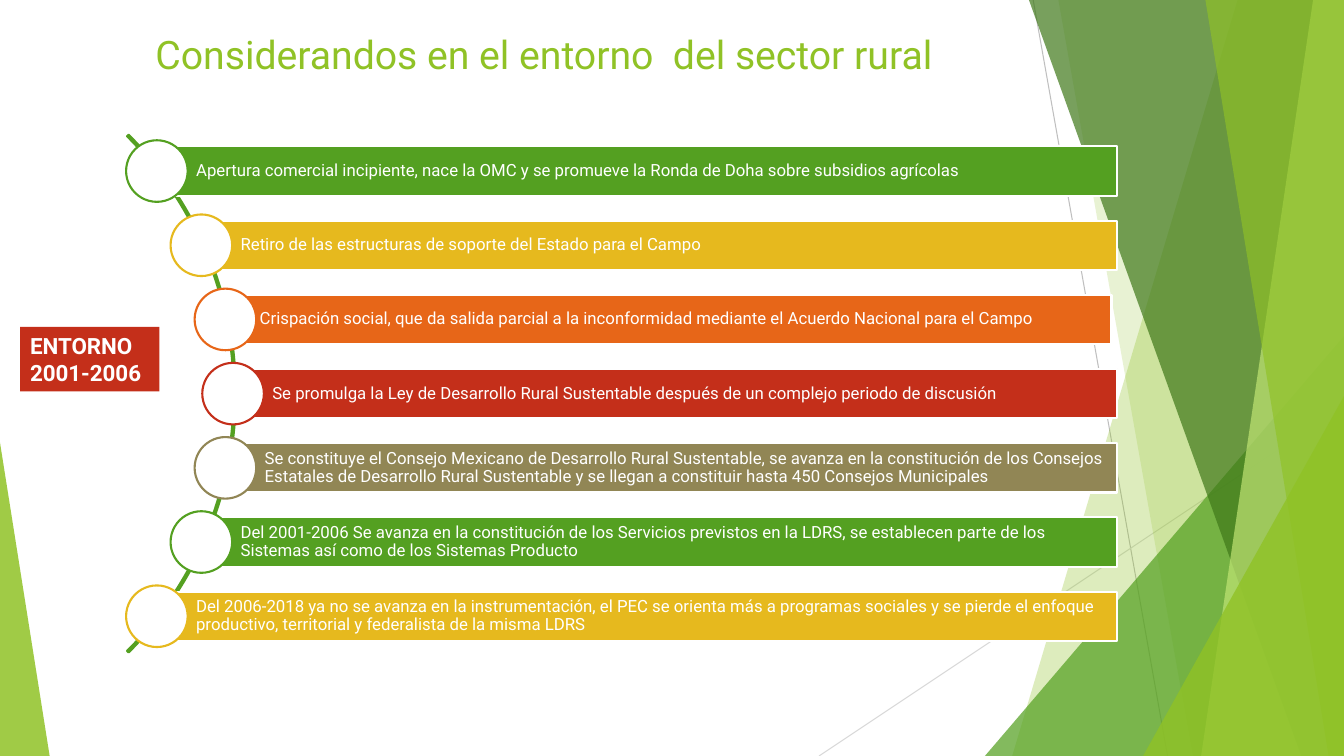
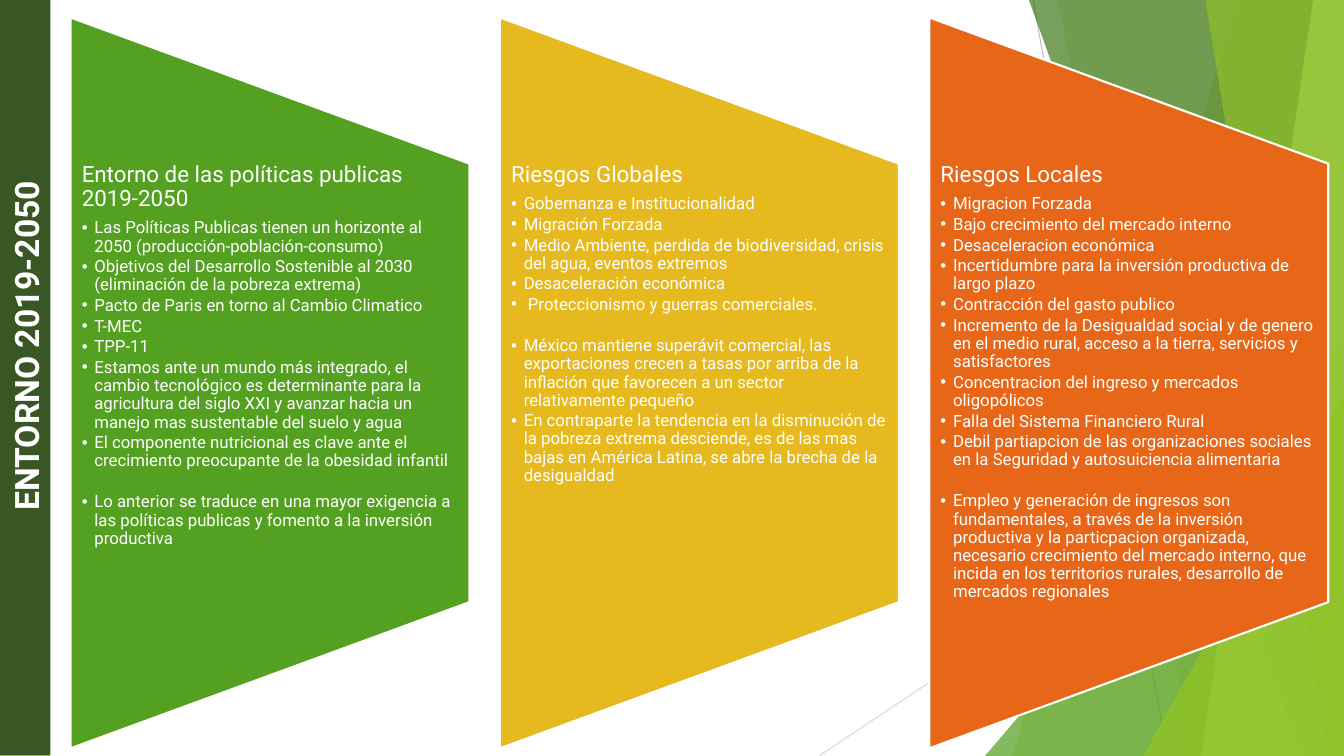
import math

import lxml.etree
import pptx
import pptx.dml.color
import pptx.enum.shapes
import pptx.enum.text
import pptx.oxml.ns
import pptx.util

Pt = pptx.util.Pt
SHAPE = pptx.enum.shapes.MSO_SHAPE
ALIGN = pptx.enum.text.PP_ALIGN
ANCHOR = pptx.enum.text.MSO_ANCHOR
qn = pptx.oxml.ns.qn

FONT = "Roboto"
COLORS = {
    "white": "FFFFFF",
    "lime": "90C226",
    "pale lime": "C0E474",
    "green": "54A021",
    "dark green": "3F7819",
    "forest": "385724",
    "yellow": "E6B91E",
    "orange": "E76618",
    "red": "C42F1A",
    "olive": "918655",
    "gray": "BFBFBF",
    "light gray": "D9D9D9",
}


def rgb(name):
    return pptx.dml.color.RGBColor.from_string(COLORS[name])


def paint(shape, fill=None, line=None, alpha=None):
    shape.shadow.inherit = False
    if fill:
        shape.fill.solid()
        shape.fill.fore_color.rgb = rgb(fill)
    else:
        shape.fill.background()
    if alpha:
        color = shape.element.xpath("./p:spPr/a:solidFill/a:srgbClr")[0]
        lxml.etree.SubElement(color, qn("a:alpha"), val=str(alpha * 1000))
    if line:
        shape.line.color.rgb = rgb(line)
        shape.line.width = Pt(1.5)
    else:
        shape.line.fill.background()


def write(shape, text, size=12, color="white", bold=False, align=ALIGN.LEFT,
          anchor=ANCHOR.MIDDLE, margins=(7.2, 3.6, 7.2, 3.6), spacing=1.0,
          before=0, after=0, bullet=False):
    frame = shape.text_frame
    frame.word_wrap = True
    frame.auto_size = pptx.enum.text.MSO_AUTO_SIZE.NONE
    frame.vertical_anchor = anchor
    frame.margin_left, frame.margin_top, frame.margin_right, frame.margin_bottom = map(Pt, margins)
    para = frame.add_paragraph() if frame.text else frame.paragraphs[0]
    para.alignment = align
    para.level = 1 if bullet else 0
    para.line_spacing = spacing
    para.space_before = Pt(before)
    para.space_after = Pt(after)
    properties = para._p.get_or_add_pPr()
    indent = Pt(9) if bullet else 0
    properties.set("marL", str(indent))
    properties.set("indent", str(-indent))
    if bullet:
        lxml.etree.SubElement(properties, qn("a:buChar"), char="•")
    else:
        lxml.etree.SubElement(properties, qn("a:buNone"))
    span = para.add_run()
    span.text = text
    span.font.name = FONT
    span.font.size = Pt(size)
    span.font.bold = bold
    span.font.color.rgb = rgb(color)


deck = pptx.Presentation()
deck.slide_width = Pt(960)
deck.slide_height = Pt(540)

page = deck.slides.add_slide(deck.slide_layouts[5])
backdrop = []

for start_x, start_y, end_x, color in [(738, 0, 834, "gray"), (960, 290, 585, "light gray")]:
    connector = page.shapes.add_connector(
        pptx.enum.shapes.MSO_CONNECTOR.STRAIGHT, Pt(start_x), Pt(start_y), Pt(end_x), Pt(540))
    connector.line.color.rgb = rgb(color)
    connector.line.width = Pt(0.75)
    lxml.etree.SubElement(connector.element.spPr, qn("a:effectLst"))
    backdrop.append(connector)

facets = [
    ("band", (884, 723), "lime", 30),
    ("band", (756, 852), "lime", 20),
    ("triangle", (703.5, 240, 256.5, 1), "green", 72),
    ("band", (735, 929.5), "dark green", 70),
    ("band", (938, 858), "pale lime", 70),
    ("band", (861, 949), "lime", 65),
    ("triangle", (816.5, 283, 143.5, 1), "lime", 80),
    ("triangle", (0, 316, 35.5, 0), "lime", 85),
]
for kind, geometry, color, alpha in facets:
    if kind == "band":
        top_x, bottom_x = geometry
        outline = page.shapes.build_freeform(Pt(top_x), Pt(0))
        outline.add_line_segments([(Pt(960), Pt(0)), (Pt(960), Pt(540)), (Pt(bottom_x), Pt(540))])
        facet = outline.convert_to_shape()
    else:
        left, top, width, tip = geometry
        facet = page.shapes.add_shape(
            SHAPE.ISOSCELES_TRIANGLE, Pt(left), Pt(top), Pt(width), Pt(540 - top))
        facet.adjustments[0] = tip
    paint(facet, color, alpha=alpha)
    backdrop.append(facet)

for index, shape in enumerate(backdrop):
    shape.element.xpath(".//p:cNvPr")[0].set("id", str(100 + index))
    deck.slide_master.shapes.element.insert(2 + index, shape.element)

title = page.shapes.title
title.left, title.top, title.width, title.height = Pt(50), Pt(18.7), Pt(677), Pt(39.6)
write(title, "Considerandos en el entorno  del sector rural", size=28, color="lime", align=ALIGN.CENTER)

center_x, center_y = -93, 281.2
arc_size = 523
arc = page.shapes.add_shape(
    SHAPE.BLOCK_ARC, Pt(center_x - arc_size / 2), Pt(center_y - arc_size / 2), Pt(arc_size), Pt(arc_size))
arc.adjustments[0] = 189
arc.adjustments[1] = 27
arc.adjustments[2] = 0.003
paint(arc, line="green")

milestones = [
    ("green", 0, 798, "Apertura comercial incipiente, nace la OMC y se promueve la Ronda de Doha sobre subsidios agrícolas"),
    ("yellow", 0, 798, "Retiro de las estructuras de soporte del Estado para el Campo"),
    ("orange", -3.5, 794, "Crispación social, que da salida parcial a la inconformidad mediante el Acuerdo Nacional para el Campo"),
    ("red", 0, 798, "Se promulga la Ley de Desarrollo Rural Sustentable después de un complejo periodo de discusión"),
    ("olive", 0, 798, "Se constituye el Consejo Mexicano de Desarrollo Rural Sustentable, se avanza en la constitución de los Consejos Estatales de Desarrollo Rural Sustentable y se llegan a constituir hasta 450 Consejos Municipales"),
    ("green", 0, 798, "Del 2001-2006 Se avanza en la constitución de los Servicios previstos en la LDRS, se establecen parte de los Sistemas así como de los Sistemas Producto"),
    ("yellow", 0, 798, "Del 2006-2018 ya no se avanza en la instrumentación, el PEC se orienta más a programas sociales y se pierde el enfoque productivo, territorial y federalista de la misma LDRS"),
]
row_pitch, bar_height, dot_size, dot_radius = 53, 35.3, 44, 259.5
for index, (color, shift, right, text) in enumerate(milestones):
    offset = (index - 3) * row_pitch
    dot_x = center_x + math.sqrt(dot_radius ** 2 - offset ** 2)
    row_y = center_y + offset
    bar = page.shapes.add_shape(
        SHAPE.RECTANGLE, Pt(dot_x + shift), Pt(row_y - bar_height / 2),
        Pt(right - dot_x - shift), Pt(bar_height))
    paint(bar, color, "white")
    write(bar, text, margins=(28, 2, 2, 2), spacing=0.9)
    dot = page.shapes.add_shape(
        SHAPE.OVAL, Pt(dot_x - dot_size / 2), Pt(row_y - dot_size / 2), Pt(dot_size), Pt(dot_size))
    paint(dot, "white", color)

period = page.shapes.add_shape(SHAPE.RECTANGLE, Pt(14.4), Pt(233.5), Pt(99.5), Pt(46))
paint(period, "red")
for text in ["ENTORNO", "2001-2006"]:
    write(period, text, size=16, bold=True)

page = deck.slides.add_slide(deck.slide_layouts[4])
title, *bodies, unused = page.placeholders
unused.element.getparent().remove(unused.element)

columns = [
    ("green", "Entorno de las políticas publicas 2019-2050", [
        "Las Políticas Publicas tienen un horizonte al 2050 (producción-población-consumo)",
        "Objetivos del Desarrollo Sostenible al 2030 (eliminación de la pobreza extrema)",
        "Pacto de Paris en torno al Cambio Climatico",
        "T-MEC",
        "TPP-11",
        "Estamos ante un mundo más integrado, el cambio tecnológico es determinante para la agricultura del siglo XXI y avanzar hacia un manejo mas sustentable del suelo y agua",
        "El componente nutricional es clave ante el crecimiento preocupante de la obesidad infantil",
    ], [
        "Lo anterior se traduce en una mayor exigencia a las políticas publicas y fomento a la inversión productiva",
    ]),
    ("yellow", "Riesgos Globales", [
        "Gobernanza e Institucionalidad",
        "Migración Forzada",
        "Medio Ambiente, perdida de biodiversidad, crisis del agua, eventos extremos",
        "Desaceleración económica",
        " Proteccionismo y guerras comerciales.",
    ], [
        "México mantiene superávit comercial, las exportaciones crecen a tasas por arriba de la inflación que favorecen a un sector relativamente pequeño",
        "En contraparte la tendencia en la disminución de la pobreza extrema desciende, es de las mas bajas en América Latina, se abre la brecha de la desigualdad",
    ]),
    ("orange", "Riesgos Locales", [
        "Migracion Forzada",
        "Bajo crecimiento del mercado interno",
        "Desaceleracion económica",
        "Incertidumbre para la inversión productiva de largo plazo",
        "Contracción del gasto publico",
        "Incremento de la Desigualdad social y de genero en el medio rural, acceso a la tierra, servicios y satisfactores",
        "Concentracion del ingreso y mercados oligopólicos",
        "Falla del Sistema Financiero Rural",
        "Debil partiapcion de las organizaciones sociales en la Seguridad y autosuiciencia alimentaria",
    ], [
        "Empleo y generación de ingresos son fundamentales, a través de la inversión productiva y la particpacion organizada, necesario crecimiento del mercado interno, que incida en los territorios rurales, desarrollo de mercados regionales",
    ]),
]
column_width, panel_height, column_pitch = 285, 522, 306.7
body_format = {"anchor": ANCHOR.TOP, "margins": (8, 0, 8, 0), "spacing": 0.9}
for index, (body, (color, heading, items, conclusions)) in enumerate(zip(bodies, columns)):
    left = 50.4 + index * column_pitch
    panel = page.shapes.add_shape(
        SHAPE.FLOWCHART_MANUAL_OPERATION, Pt(left + (column_width - panel_height) / 2),
        Pt(131), Pt(panel_height), Pt(column_width))
    panel.rotation = 270
    paint(panel, color, "white")
    body.left, body.top, body.width, body.height = Pt(left), Pt(116.6), Pt(column_width), Pt(313)
    page.shapes.element.append(body.element)
    write(body, heading, size=16, after=5.6, **body_format)
    for item in items:
        write(body, item, after=1.8, bullet=True, **body_format)
    for position, item in enumerate(conclusions):
        write(body, item, before=0 if position else 14.6, after=1.8, bullet=True, **body_format)

band = page.shapes.add_shape(SHAPE.RECTANGLE, Pt(0), Pt(0), Pt(36), Pt(539.5))
paint(band, "forest")
title.left, title.top, title.width, title.height = Pt(-121), Pt(211), Pt(278.6), Pt(36)
title.rotation = 270
page.shapes.element.append(title.element)
write(title, "ENTORNO 2019-2050", size=24, bold=True, margins=(3.6, 3.6, 3.6, 3.6))

deck.save("out.pptx")
